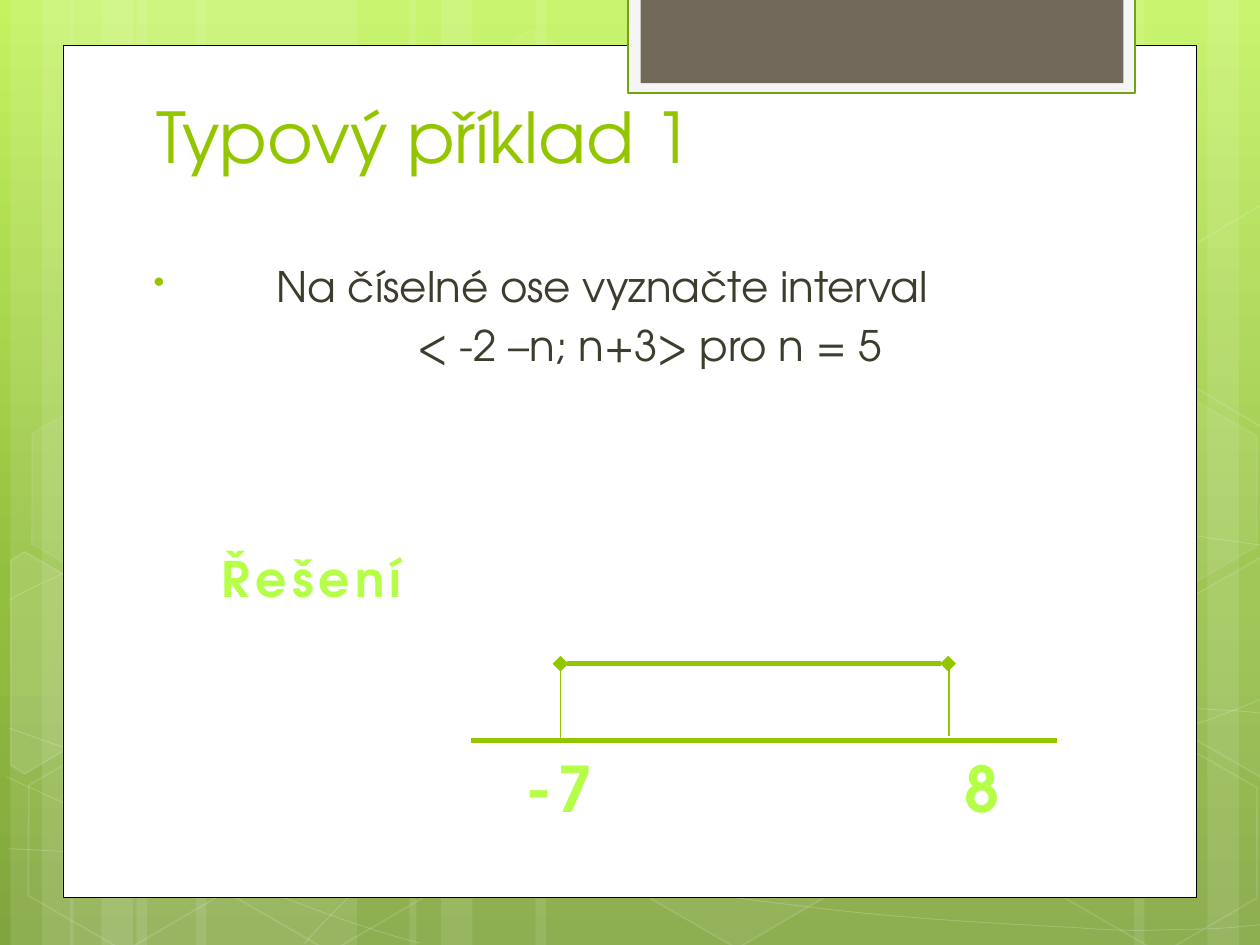
from math import cos, radians, sin

from lxml import etree
from pptx import Presentation
from pptx.dml.color import RGBColor
from pptx.enum.shapes import MSO_CONNECTOR, MSO_SHAPE
from pptx.enum.text import MSO_ANCHOR, MSO_AUTO_SIZE, PP_ALIGN
from pptx.oxml.ns import qn
from pptx.util import Pt

RECTANGLE, HEXAGON = MSO_SHAPE.RECTANGLE, MSO_SHAPE.HEXAGON
STRAIGHT = MSO_CONNECTOR.STRAIGHT
TOP, BOTTOM = MSO_ANCHOR.TOP, MSO_ANCHOR.BOTTOM
NO_AUTOFIT = MSO_AUTO_SIZE.NONE
LEFT, CENTER = PP_ALIGN.LEFT, PP_ALIGN.CENTER

FONT = "TeX Gyre Adventor"
WHITE, GREEN, LIME, DARK = "FFFFFF", "94C600", "B6FF48", "3E3D2D"
PAGE_WIDTH, PAGE_HEIGHT = 720, 540
HEXAGON_TURN = 30

BACKGROUND_STOPS = [(0, "C3F35F"), (62, "93BF3F"), (100, "81A53E")]

# left, width
STRIPES = [(78, 126), (6, 36), (24, 60), (112, 126), (40, 36), (58, 60),
           (528, 126), (690, 36), (648, 60), (306, 222), (234, 36), (252, 60)]

# start point, then two control points and an end point for each segment
CURVES = [
    [(5, 485), (44, 487), (83, 489), (137, 488), (191, 487), (258, 486), (330, 479),
     (402, 472), (504, 458), (570, 444), (636, 431), (703, 409), (725, 397)],
    [(5, 343), (26, 332), (47, 321), (87, 310), (128, 300), (186, 283), (250, 279),
     (314, 274), (392, 273), (471, 279), (550, 284), (682, 307), (725, 312)],
    [(4, 444), (91, 484), (178, 523), (240, 539)],
    [(5, 416), (27, 424), (50, 432), (92, 444), (134, 454), (197, 472), (257, 485),
     (317, 497), (392, 510), (452, 517), (512, 525), (576, 528), (614, 530),
     (652, 533), (662, 531), (680, 531), (699, 531), (712, 529), (725, 528)],
    [(174, 539), (187, 525), (200, 510), (217, 498), (235, 485), (259, 470), (279, 460),
     (300, 450), (312, 446), (338, 438), (364, 431), (413, 421), (438, 416),
     (464, 411), (467, 411), (490, 410), (512, 407), (547, 405), (572, 405),
     (597, 404), (638, 405), (686, 405), (699, 406), (711, 406), (724, 408)],
]

# left, top, fill opacity, line opacity
HEXAGONS = [(240.5, 26, 4, 8), (358, 424, 6, 12), (8, 425.5, None, 12),
            (10, 224.5, 7, 8), (125.5, 426, None, 12),
            (600.5, 427, None, 12), (600.5, 226, 7, 8)]

# centre, corners as they appear after turning, fill opacity
CUT_HEXAGONS = [
    ((26, 385), [(6, 320), (14, 315), (69, 347), (68, 410), (14, 442), (6, 437)], 10),
    ((709, 374.5), [(667, 349), (721, 318), (726, 321), (726, 441), (721, 444),
                    (667, 413)], 4),
    ((709, 173.5), [(667, 149), (721, 117), (727, 120), (726, 241), (721, 244),
                    (667, 212)], None),
]


def rgb(value):
    return RGBColor.from_string(value)


def set_color(fill, color, opacity):
    fill.solid()
    fill.fore_color.rgb = rgb(color)
    if opacity < 100:
        node = fill.fore_color._xFill.find(qn("a:srgbClr"))
        etree.SubElement(node, qn("a:alpha"), val=str(opacity * 1000))


def paint(shape, fill=None, opacity=100, line=None, width=1, line_opacity=100):
    shape.shadow.inherit = False
    if fill and opacity:
        set_color(shape.fill, fill, opacity)
    else:
        shape.fill.background()
    if line:
        set_color(shape.line.fill, line, line_opacity)
        shape.line.width = Pt(width)
    else:
        shape.line.fill.background()


def add_box(page, kind, box, **look):
    shape = page.shapes.add_shape(kind, *map(Pt, box))
    paint(shape, **look)
    return shape


def add_outline(page, points, close, **look):
    corners = [(Pt(x), Pt(y)) for x, y in points]
    builder = page.shapes.build_freeform(*corners[0])
    builder.add_line_segments(corners[1:], close=close)
    shape = builder.convert_to_shape()
    paint(shape, **look)
    return shape


def add_curve(page, controls, **look):
    """Draw the control points, then join each three into one Bezier segment."""
    shape = add_outline(page, controls, False, **look)
    outline = next(shape._element.iter(qn("a:path")))
    steps = outline.findall(qn("a:lnTo"))
    for first in range(0, len(steps), 3):
        segment = etree.SubElement(outline, qn("a:cubicBezTo"))
        for step in steps[first:first + 3]:
            segment.append(step[0])
            outline.remove(step)


def turn_back(point, center):
    """Place of a point before the hexagon turn about the centre."""
    angle = radians(-HEXAGON_TURN)
    x, y = point[0] - center[0], point[1] - center[1]
    return (center[0] + x * cos(angle) - y * sin(angle),
            center[1] + x * sin(angle) + y * cos(angle))


def add_line(page, start, end, width, ends=None):
    line = page.shapes.add_connector(STRAIGHT, *map(Pt, start + end))
    line.line.color.rgb = rgb(GREEN)
    line.line.width = Pt(width)
    if ends:
        for tag in ("a:headEnd", "a:tailEnd"):
            etree.SubElement(line.line._get_or_add_ln(), qn(tag), type=ends)
    etree.SubElement(line._element.spPr, qn("a:effectLst"))


def set_text(shape, lines, size, color, bold=False, spacing=0, anchor=TOP, align=LEFT):
    frame = shape.text_frame
    frame_format = {"word_wrap": True, "auto_size": NO_AUTOFIT, "vertical_anchor": anchor}
    for name, value in frame_format.items():
        setattr(frame, name, value)
    frame.text = "\n".join(lines)
    font_format = {"name": FONT, "size": Pt(size), "bold": bold}
    for para in frame.paragraphs:
        para.alignment = align
        for span in para.runs:
            for name, value in font_format.items():
                setattr(span.font, name, value)
            span.font.color.rgb = rgb(color)
            if spacing:
                span.font._element.set("spc", str(spacing * 100))
    return frame.paragraphs


def add_text(page, box, lines, size, color, **look):
    return set_text(page.shapes.add_textbox(*map(Pt, box)), lines, size, color, **look)


def fill_background(page):
    fill = page.background.fill
    fill.gradient()
    fill.gradient_angle = 270
    stops = next(page.element.iter(qn("a:gsLst")))
    for stop in list(stops):
        stops.remove(stop)
    for position, color in BACKGROUND_STOPS:
        stop = etree.SubElement(stops, qn("a:gs"), pos=str(position * 1000))
        etree.SubElement(stop, qn("a:srgbClr"), val=color)


def add_decoration(page):
    for left, width in STRIPES:
        add_box(page, RECTANGLE, (left, 0, width, PAGE_HEIGHT), fill=WHITE, opacity=10)
    for controls in CURVES:
        add_curve(page, controls, line=WHITE, width=0.5, line_opacity=20)
    for left, top, opacity, line_opacity in HEXAGONS:
        shape = add_box(page, HEXAGON, (left, top, 126, 109.5), fill=WHITE,
                        opacity=opacity, line=WHITE, line_opacity=line_opacity)
        shape.rotation = HEXAGON_TURN
        shape.adjustments[0] = 0.285
    for center, corners, opacity in CUT_HEXAGONS:
        shape = add_outline(page, [turn_back(corner, center) for corner in corners], True,
                            fill=WHITE, opacity=opacity, line=WHITE, line_opacity=12)
        shape.rotation = HEXAGON_TURN


def add_panel(page, box):
    left = box[0] + 323
    add_box(page, RECTANGLE, box, fill=WHITE, line="000000", width=0.5)
    add_box(page, RECTANGLE, (left, -1.5, 289.5, 54.5),
            fill="F5F5F5", line="74A510", width=1.25)
    add_box(page, RECTANGLE, (left + 7, -1.5, 276, 49), fill="71685A")


def place_title(page, box):
    title = page.shapes.title
    page.shapes._spTree.append(title._element)
    for name, value in zip(("left", "top", "width", "height"), box):
        setattr(title, name, Pt(value))
    set_text(title, ["Typový příklad 1"], 40, GREEN, anchor=BOTTOM)


def add_task(page, box):
    lines = ["Na číselné ose vyznačte interval", "< -2 –n; n+3> pro n = 5"]
    paras = add_text(page, box, lines, 24, DARK)
    for para, margin, indent in zip(paras, (119.7, 200.5), (-70, 0)):
        para.space_before = Pt(4.8)
        properties = para._p.get_or_add_pPr()
        properties.set("marL", str(Pt(margin)))
        properties.set("indent", str(Pt(indent)))
    bullet = paras[0]._p.get_or_add_pPr()
    bullet_color = etree.SubElement(bullet, qn("a:buClr"))
    etree.SubElement(bullet_color, qn("a:srgbClr"), val=GREEN)
    etree.SubElement(bullet, qn("a:buSzPct"), val="76000")
    etree.SubElement(bullet, qn("a:buChar"), char="•")


def add_number_line(page, box):
    left, top, width, height = box
    axis = top + height
    lower, upper = left + 51, left + 272.5
    add_line(page, (upper + 0.5, top - 3), (upper + 0.5, axis - 3), 0.75)
    add_line(page, (left, axis), (left + width, axis), 3)
    add_line(page, (lower, top), (upper, top), 3, ends="diamond")
    add_line(page, (lower, top), (lower, axis), 0.75)
    para, = add_text(page, (left + 24, axis + 1.5, 292, 51), ["-7\t8"], 36, LIME,
                     bold=True, spacing=3)
    tabs = etree.SubElement(para._p.get_or_add_pPr(), qn("a:tabLst"))
    etree.SubElement(tabs, qn("a:tab"), pos=str(Pt(251)), algn="l")


def main():
    deck = Presentation()
    deck.slide_width, deck.slide_height = Pt(PAGE_WIDTH), Pt(PAGE_HEIGHT)
    page = deck.slides.add_slide(deck.slide_layouts[5])
    fill_background(page)
    add_decoration(page)
    add_panel(page, (36, 26, 648, 487))
    place_title(page, (82, 15, 597, 90))
    add_task(page, (31, 145.5, 648, 93))
    add_number_line(page, (269.3, 379.3, 334.7, 44))
    add_text(page, (117.5, 310, 121.5, 41), ["Řešení"], 28, LIME,
             bold=True, spacing=3, align=CENTER)
    deck.save("out.pptx")


if __name__ == "__main__":
    main()
